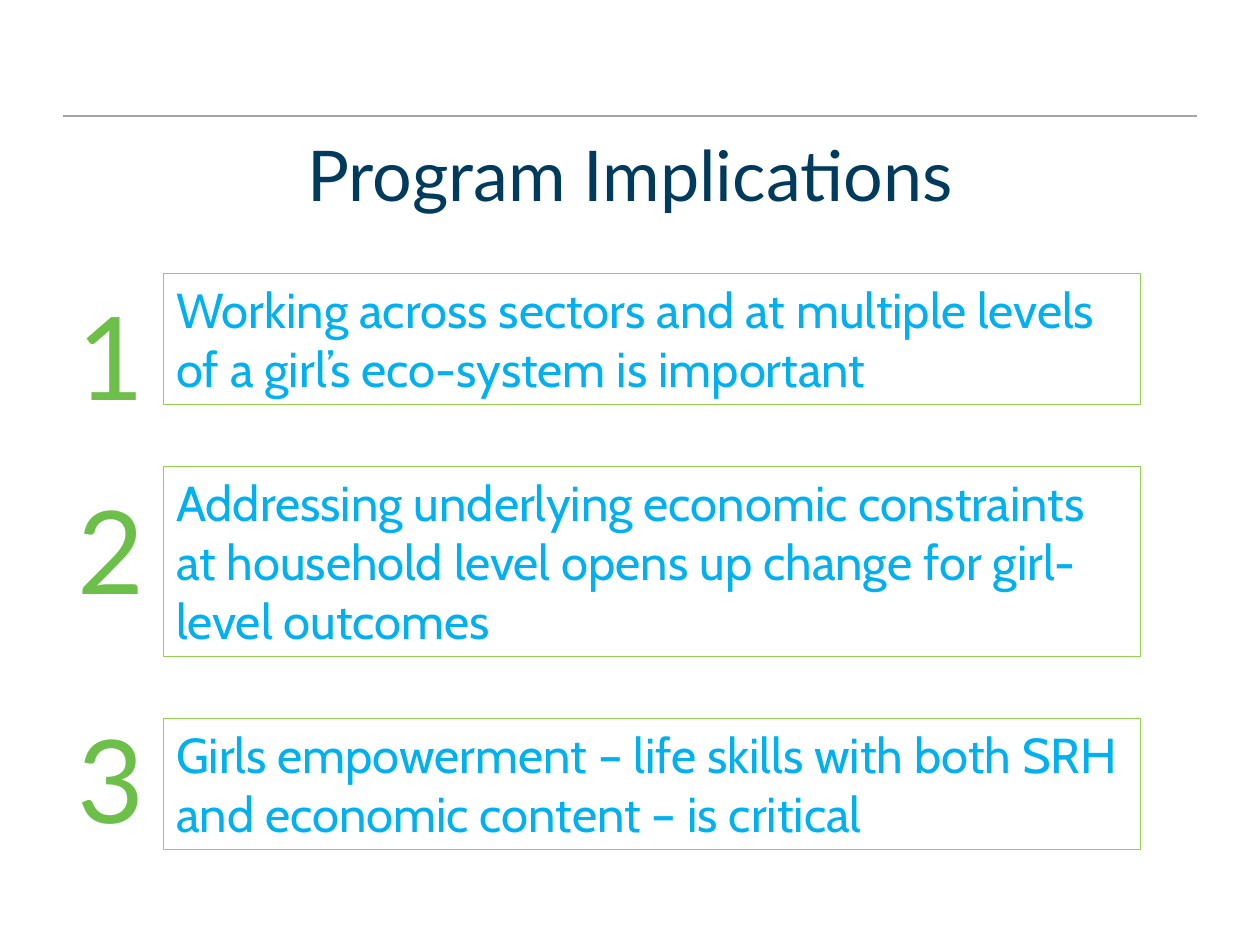
"""Build the Program Implications slide: a title and three numbered statements."""
from dataclasses import dataclass

from pptx import Presentation
from pptx import util as u
from pptx.dml.color import RGBColor
from pptx.enum import shapes, text
from pptx.oxml.ns import qn
from pptx.slide import Slide
from pptx.text.text import TextFrame
from lxml import etree

COLORS = {
    "rule": "A6A6A6",
    "border": "92D050",
    "statement": "00B0F0",
    "number": "6CC04A",
    "title": "003A5D",
}


@dataclass
class Implication:
    wording: str
    top: float
    height: float
    number_top: float


IMPLICATIONS = [
    Implication("Working across sectors and at multiple levels of a girl’s "
                "eco-system is important", 2.17, 1.04, 2.21),
    Implication("Addressing underlying economic constraints at household level "
                "opens up change for girl-level outcomes", 3.7, 1.51, 3.75),
    Implication("Girls empowerment – life skills with both SRH and economic "
                "content – is critical", 5.7, 1.04, 5.57),
]


def color(name: str) -> RGBColor:
    return RGBColor.from_string(COLORS[name])


def add_text(tf: TextFrame, wording: str, size: int, font: str, tint: str,
             align: text.PP_ALIGN = text.PP_ALIGN.LEFT) -> None:
    p = tf.paragraphs[0]
    p.alignment = align
    r = p.add_run()
    r.text = wording
    r.font.size = u.Pt(size)
    r.font.name = font
    r.font.color.rgb = color(tint)


def add_rule(s: Slide) -> None:
    line = s.shapes.add_connector(shapes.MSO_CONNECTOR.STRAIGHT, u.Inches(0.5),
                                  u.Inches(0.92), u.Inches(9.5), u.Inches(0.92))
    line.line.color.rgb = color("rule")
    line.line.width = u.Pt(1)
    etree.SubElement(line._element.spPr, qn("a:effectLst"))


def add_title(s: Slide, wording: str) -> None:
    title = s.shapes.title
    title.left, title.top = u.Inches(0.5), u.Inches(0.75)
    title.width, title.height = u.Inches(9), u.Inches(1.25)
    title.text_frame.vertical_anchor = text.MSO_ANCHOR.MIDDLE
    add_text(title.text_frame, wording, 40, "Lato", "title", text.PP_ALIGN.CENTER)


def add_implication(s: Slide, number: int, item: Implication) -> None:
    sp = s.shapes.add_shape(shapes.MSO_SHAPE.RECTANGLE, u.Inches(1.3),
                            u.Inches(item.top), u.Inches(7.75), u.Inches(item.height))
    sp.shadow.inherit = False
    sp.fill.background()
    sp.line.color.rgb = color("border")
    sp.line.width = u.Pt(0.75)
    tf = sp.text_frame
    tf.word_wrap = True
    tf.auto_size = text.MSO_AUTO_SIZE.SHAPE_TO_FIT_TEXT
    tf.vertical_anchor = text.MSO_ANCHOR.TOP
    add_text(tf, item.wording, 28, "Cabin", "statement")

    box = s.shapes.add_textbox(u.Inches(0.52), u.Inches(item.number_top),
                               u.Inches(0.74), u.Inches(1.21))
    box.text_frame.word_wrap = False
    box.text_frame.auto_size = text.MSO_AUTO_SIZE.SHAPE_TO_FIT_TEXT
    add_text(box.text_frame, str(number), 66, "Lato", "number")


def main() -> None:
    prs = Presentation()
    prs.slide_width, prs.slide_height = u.Inches(10), u.Inches(7.5)
    s = prs.slides.add_slide(prs.slide_layouts[5])
    add_rule(s)
    add_title(s, "Program Implications")
    for number, item in enumerate(IMPLICATIONS, start=1):
        add_implication(s, number, item)
    prs.save("out.pptx")


if __name__ == "__main__":
    main()
